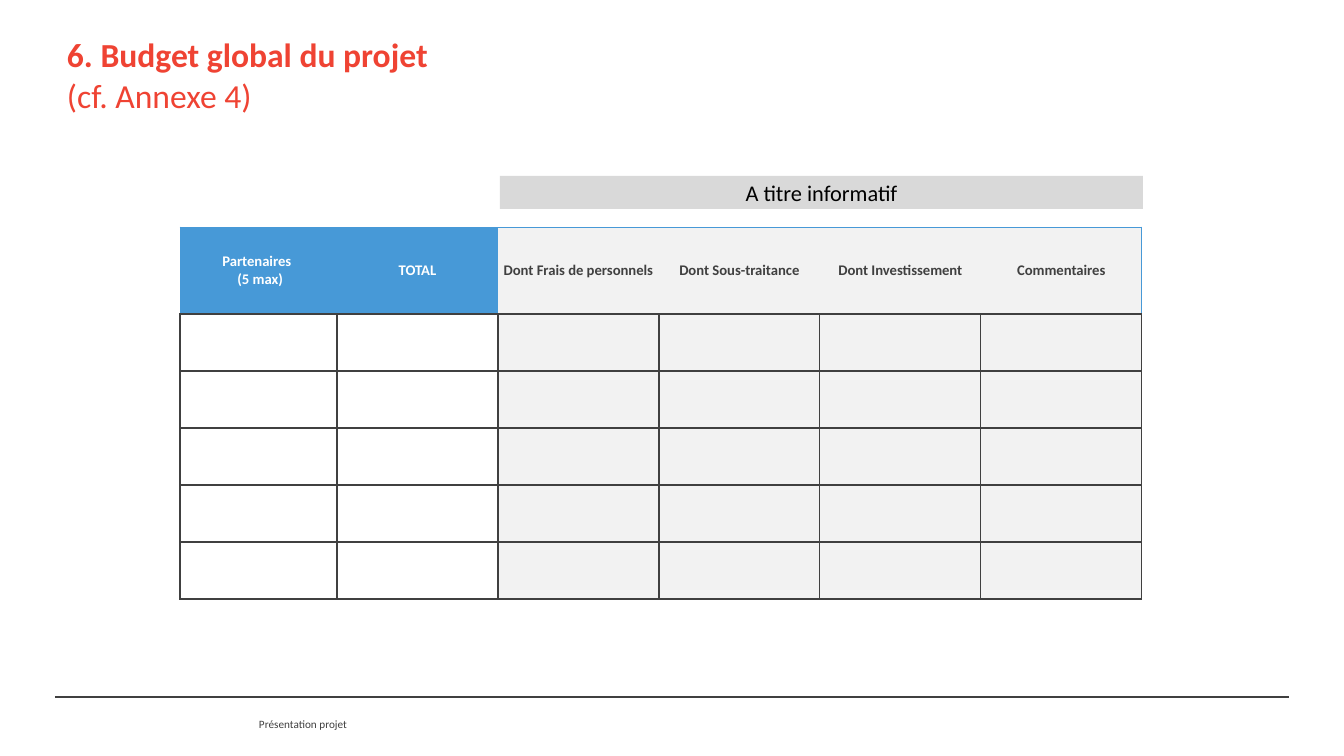
"""Builds the overall project budget slide with its partner table."""
import pptx
import pptx.dml.color
import pptx.enum.shapes
import pptx.enum.text
import pptx.oxml
import pptx.oxml.ns
import pptx.util

EMU_PER_PX = 914400 / 100.8
THEME = {
    "font": "Calibri",
    "red": "EF4333", "blue": "4799D7", "dark": "404040", "black": "000000",
    "white": "FFFFFF", "light": "F2F2F2", "band": "D9D9D9",
    "title_size": 24, "band_size": 16, "header_size": 10.5, "footer_size": 8,
    "rule_width": 1.5, "grid_width": 1, "header_width": 0.75,
}
COLOR = {name: pptx.dml.color.RGBColor.from_string(value)
         for name, value in THEME.items() if name in
         ("red", "blue", "dark", "black", "white", "light", "band")}
CENTER = pptx.enum.text.PP_ALIGN.CENTER
LEFT = pptx.enum.text.PP_ALIGN.LEFT
MIDDLE = pptx.enum.text.MSO_ANCHOR.MIDDLE


def px(*lengths):
    """Turn px lengths into EMU."""
    return [pptx.util.Emu(round(length * EMU_PER_PX)) for length in lengths]


def write_text(text_frame, pieces, color, size, alignment):
    """Fill the first paragraph with (text, bold) runs, one per line."""
    paragraph = text_frame.paragraphs[0]
    paragraph.alignment = alignment
    for index, (text, bold) in enumerate(pieces):
        if index:
            paragraph.add_line_break()
        run = paragraph.add_run()
        run.text = text
        formats = {"name": THEME["font"], "size": pptx.util.Pt(THEME[size]), "bold": bold}
        for name, value in formats.items():
            setattr(run.font, name, value)
        run.font.color.rgb = COLOR[color]


presentation = pptx.Presentation()
presentation.slide_width, presentation.slide_height = px(1344, 756)
slide = presentation.slides.add_slide(presentation.slide_layouts[5])

footer = slide.shapes.add_textbox(*px(259, 717, 89, 13))
footer_format = {"margin_left": 0, "margin_right": 0, "margin_top": 0,
                 "margin_bottom": 0, "word_wrap": False}
for name, value in footer_format.items():
    setattr(footer.text_frame, name, value)
write_text(footer.text_frame, [("Présentation projet", False)], "dark", "footer_size", LEFT)

rule = slide.shapes.add_connector(pptx.enum.shapes.MSO_CONNECTOR.STRAIGHT, *px(55, 697, 1289, 697))
rule.line.color.rgb = COLOR["dark"]
rule.line.width = pptx.util.Pt(THEME["rule_width"])
rule.element.spPr.append(pptx.oxml.parse_xml(f"<a:effectLst {pptx.oxml.ns.nsdecls('a')}/>"))

title = slide.shapes.title
title.left, title.top, title.width, title.height = px(67, 32, 1210, 85)
title_format = {"margin_left": 0, "margin_right": 0, "vertical_anchor": MIDDLE,
                "word_wrap": True, "auto_size": pptx.enum.text.MSO_AUTO_SIZE.NONE}
for name, value in title_format.items():
    setattr(title.text_frame, name, value)
write_text(title.text_frame, [("6. Budget global du projet", True), ("(cf. Annexe 4)", False)],
           "red", "title_size", LEFT)

headers = [["Partenaires ", " (5 max)"], ["TOTAL"], ["Dont Frais de personnels"],
           ["Dont Sous-traitance"], ["Dont Investissement"], ["Commentaires"]]
column_widths = [157] + [161] * 5
row_heights = [87] + [57] * 5
main_columns = 2
last_column = len(column_widths) - 1

table = slide.shapes.add_table(len(row_heights), len(column_widths), *px(
    180, 227, sum(column_widths), sum(row_heights))).table
table.first_row = False
table.horz_banding = False
for column, width in zip(table.columns, px(*column_widths)):
    column.width = width
for row, height in zip(table.rows, px(*row_heights)):
    row.height = height

for row_index in range(len(row_heights)):
    for column_index, header in enumerate(headers):
        cell = table.cell(row_index, column_index)
        is_header = row_index == 0
        is_main = column_index < main_columns
        cell.fill.solid()
        fill = "light" if not is_main else "blue" if is_header else "white"
        cell.fill.fore_color.rgb = COLOR[fill]

        grid = (THEME["dark"], THEME["grid_width"])
        borders = dict.fromkeys(("lnL", "lnR", "lnT", "lnB"), grid)
        if is_header:
            outline = (THEME["blue"], THEME["header_width"])
            borders["lnT"] = outline
            borders["lnL"] = outline if column_index == 0 else None
            borders["lnR"] = outline if column_index == last_column else None
            cell_format = {"margin_left": 0, "margin_right": 0, "margin_top": 0,
                           "margin_bottom": 0, "vertical_anchor": MIDDLE}
            for name, value in cell_format.items():
                setattr(cell, name, value)
            write_text(cell.text_frame, [(line, True) for line in header],
                       "white" if is_main else "dark", "header_size", CENTER)

        properties = cell._tc.get_or_add_tcPr()
        for position, (tag, border) in enumerate(borders.items()):
            color, width = border or (None, 0)
            paint = (f'<a:solidFill><a:srgbClr val="{color}"/></a:solidFill>'
                     if border else "<a:noFill/>")
            properties.insert(position, pptx.oxml.parse_xml(
                f'<a:{tag} {pptx.oxml.ns.nsdecls("a")} w="{pptx.util.Pt(width)}">{paint}</a:{tag}>'))

band = slide.shapes.add_shape(pptx.enum.shapes.MSO_SHAPE.RECTANGLE, *px(500, 176, 643, 33))
band.shadow.inherit = False
band.fill.solid()
band.fill.fore_color.rgb = COLOR["band"]
band.line.fill.background()
band.text_frame.vertical_anchor = MIDDLE
write_text(band.text_frame, [("A titre informatif", False)], "black", "band_size", CENTER)

presentation.save("out.pptx")
